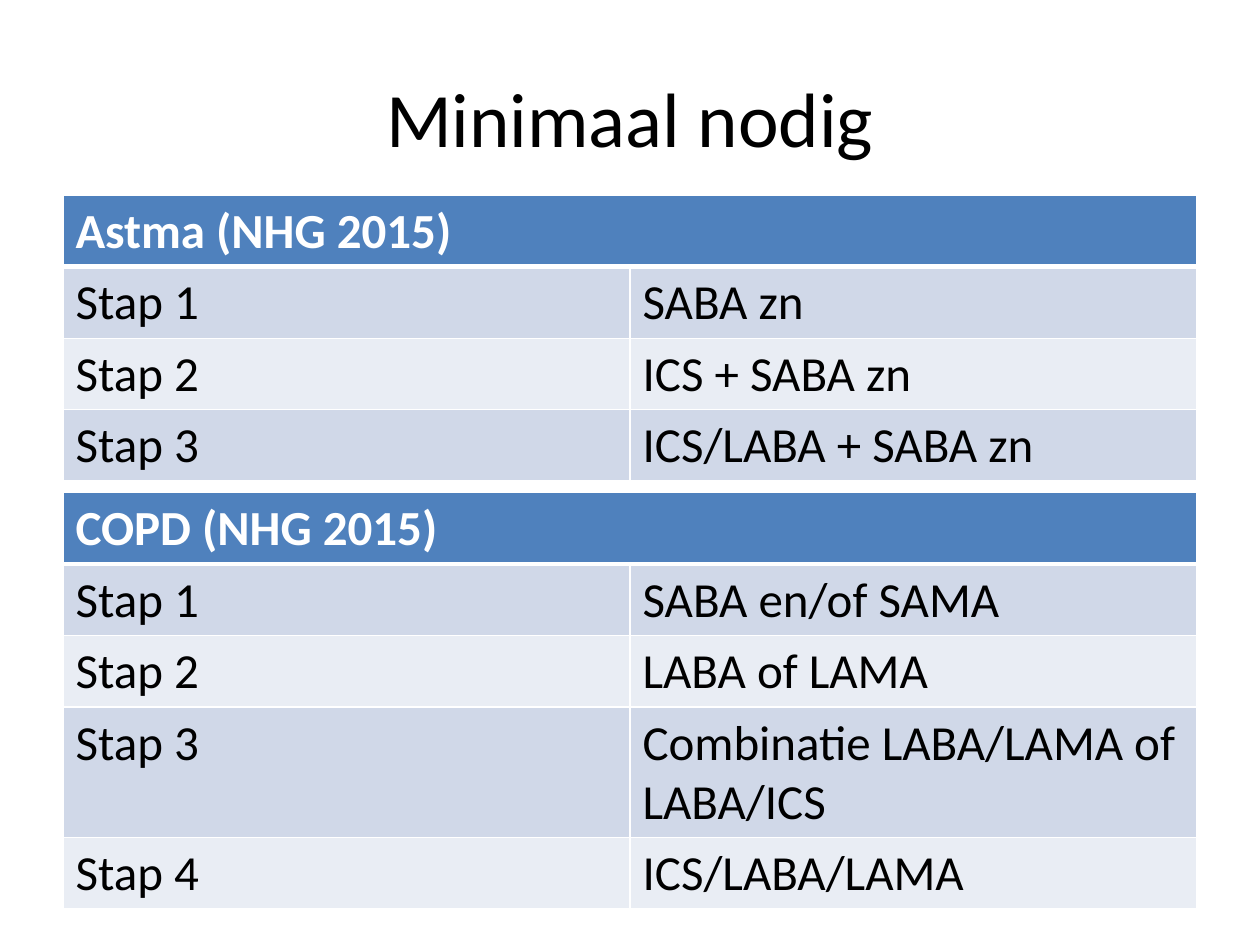
from dataclasses import dataclass

from lxml.etree import SubElement
from pptx import Presentation
from pptx.dml.color import RGBColor as RGB
from pptx.enum.text import MSO_ANCHOR as Anchor, PP_ALIGN as Align
from pptx.oxml.ns import qn
from pptx.util import Inches, Pt


@dataclass(frozen=True)
class Theme:
    font: str = "Calibri"
    title: int = 44
    body: int = 28
    thin: int = 1
    thick: int = 3
    ink: str = "000000"
    white: str = "FFFFFF"
    head: str = "4F81BD"
    bands: tuple = ("D0D8E8", "E9EDF4")


THEME = Theme()
ASTHMA = [
    ("Stap 1", "SABA zn"),
    ("Stap 2", "ICS + SABA zn"),
    ("Stap 3", "ICS/LABA + SABA zn"),
]
COPD = [
    ("Stap 1", "SABA en/of SAMA"),
    ("Stap 2", "LABA of LAMA"),
    ("Stap 3", "Combinatie LABA/LAMA of LABA/ICS"),
    ("Stap 4", "ICS/LABA/LAMA"),
]


def add_run(para, text, size, color, bold=False):
    run = para.add_run()
    run.text = text
    font = run.font
    font.name, font.size, font.bold = THEME.font, Pt(size), bold
    font.color.rgb = RGB.from_string(color)


def add_title(slide, box, text):
    frame = slide.shapes.add_textbox(*map(Inches, box)).text_frame
    frame.word_wrap = True
    frame.vertical_anchor = Anchor.MIDDLE
    para = frame.paragraphs[0]
    para.alignment = Align.CENTER
    add_run(para, text, THEME.title, THEME.ink)


def set_edges(cell, top, bottom):
    """Draw white cell borders, with top and bottom widths in points."""
    props = cell._tc.get_or_add_tcPr()
    widths = {"L": THEME.thin, "R": THEME.thin, "T": top, "B": bottom}
    for side, width in widths.items():
        line = SubElement(props, qn(f"a:ln{side}"), w=str(Pt(width)))
        fill = SubElement(line, qn("a:solidFill"))
        SubElement(fill, qn("a:srgbClr"), val=THEME.white)


def add_steps(slide, box, head, steps):
    """Place a table with one merged heading above banded rows of steps."""
    rows = [(head, "")] + steps
    table = slide.shapes.add_table(len(rows), 2, *map(Inches, box)).table
    for row in table.rows:
        row.height = Inches(0.41)
    for r, texts in enumerate(rows):
        top = THEME.thick if r == 1 else THEME.thin
        bottom = THEME.thick if r == 0 else THEME.thin
        fill = THEME.bands[(r - 1) % 2] if r else THEME.head
        color = THEME.ink if r else THEME.white
        for c, text in enumerate(texts):
            cell = table.cell(r, c)
            set_edges(cell, top, bottom)
            cell.fill.solid()
            cell.fill.fore_color.rgb = RGB.from_string(fill)
            if text:
                para = cell.text_frame.paragraphs[0]
                add_run(para, text, THEME.body, color, bold=r == 0)
    table.cell(0, 0).merge(table.cell(0, 1))


def main():
    deck = Presentation()
    deck.slide_width, deck.slide_height = Inches(10), Inches(7.5)
    slide = deck.slides.add_slide(deck.slide_layouts[6])
    add_title(slide, (0.5, 0.3, 9, 1.25), "Minimaal nodig")
    add_steps(slide, (0.5, 1.55, 9, 2.27), "Astma (NHG 2015)", ASTHMA)
    add_steps(slide, (0.5, 3.91, 9, 3.3), "COPD (NHG 2015)", COPD)
    deck.save("out.pptx")


if __name__ == "__main__":
    main()
